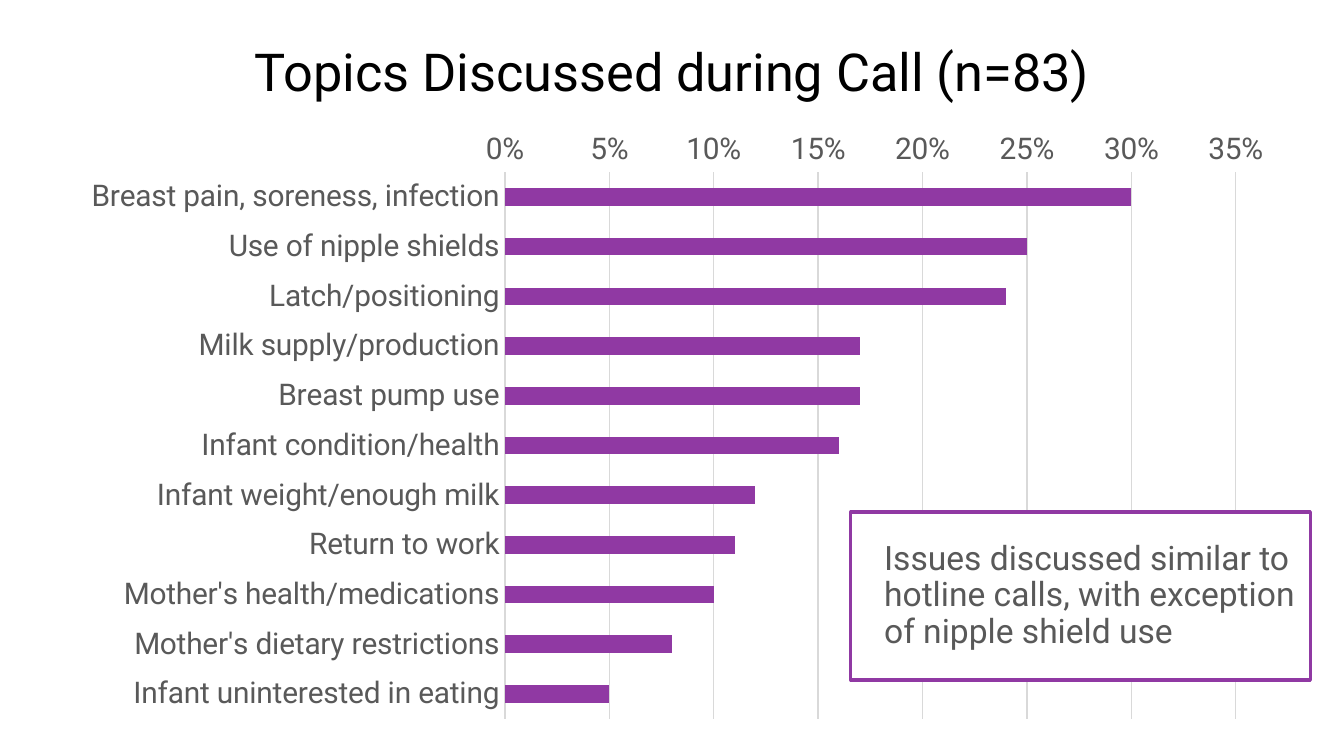
from pptx import Presentation
from pptx.chart.data import CategoryChartData
from pptx.dml.color import RGBColor
from pptx.enum.chart import XL_CHART_TYPE as ChartType, XL_TICK_MARK as TickMark
from pptx.enum.shapes import MSO_SHAPE as Shape
from pptx.enum.text import MSO_ANCHOR as Anchor, PP_ALIGN as Align
from pptx.util import Inches, Pt

COLORS = {
    "title": "000000",
    "text": "595959",
    "accent": "9039A3",
    "grid": "D9D9D9",
    "background": "FFFFFF",
}
FONT = "Roboto"
TOPIC_SHARES = {
    "Breast pain, soreness, infection": 0.30,
    "Use of nipple shields": 0.25,
    "Latch/positioning": 0.24,
    "Milk supply/production": 0.17,
    "Breast pump use": 0.17,
    "Infant condition/health": 0.16,
    "Infant weight/enough milk": 0.12,
    "Return to work": 0.11,
    "Mother's health/medications": 0.10,
    "Mother's dietary restrictions": 0.08,
    "Infant uninterested in eating": 0.05,
}


def rgb(name):
    return RGBColor.from_string(COLORS[name])


def style_font(font, size, color):
    font.name, font.size = FONT, Pt(size)
    font.color.rgb = rgb(color)


def style_line(line, color, width):
    line.color.rgb = rgb(color)
    line.width = Pt(width)


def write_text(frame, text, *, size, color, align=Align.LEFT, indent=0):
    frame.word_wrap = True
    frame.vertical_anchor = Anchor.MIDDLE
    paragraph = frame.paragraphs[0]
    paragraph.alignment = align
    paragraph.line_spacing = 0.9
    properties = paragraph._p.get_or_add_pPr()
    properties.set("marL", str(Inches(indent)))
    properties.set("indent", "0")
    run = paragraph.add_run()
    run.text = text
    style_font(run.font, size, color)


def place_title(slide, left, top, width, height):
    title = slide.shapes.title
    title.left, title.top = Inches(left), Inches(top)
    title.width, title.height = Inches(width), Inches(height)
    write_text(title.text_frame, "Topics Discussed during Call (n=83)",
               size=28, color="title", align=Align.CENTER)


def add_topics_chart(slide, left, top, width, height):
    topics = CategoryChartData(number_format="0%")
    topics.categories = list(TOPIC_SHARES)
    topics.add_series("Series 1", list(TOPIC_SHARES.values()))
    chart = slide.shapes.add_chart(
        ChartType.BAR_CLUSTERED, Inches(left), Inches(top),
        Inches(width), Inches(height), topics).chart
    chart.has_legend = False
    chart.has_title = False
    style_font(chart.font, 10, "title")

    bars = chart.plots[0]
    bars.gap_width = 182
    bars.vary_by_categories = False
    fill = bars.series[0].format.fill
    fill.solid()
    fill.fore_color.rgb = rgb("accent")

    topic_axis, share_axis = chart.category_axis, chart.value_axis
    for axis in (topic_axis, share_axis):
        axis.major_tick_mark = axis.minor_tick_mark = TickMark.NONE
        style_font(axis.tick_labels.font, 16, "text")
    topic_axis.reverse_order = True
    topic_axis.has_major_gridlines = False
    style_line(topic_axis.format.line, "grid", 0.75)

    share_axis.minimum_scale, share_axis.maximum_scale = 0, 0.35
    share_axis.major_unit = 0.05
    share_axis.tick_labels.number_format = "0%"
    share_axis.tick_labels.number_format_is_linked = False
    share_axis.format.line.fill.background()
    share_axis.has_major_gridlines = True
    style_line(share_axis.major_gridlines.format.line, "grid", 0.75)


def add_callout(slide, left, top, width, height):
    callout = slide.shapes.add_shape(
        Shape.RECTANGLE, Inches(left), Inches(top), Inches(width), Inches(height))
    callout.shadow.inherit = False
    callout.fill.solid()
    callout.fill.fore_color.rgb = rgb("background")
    style_line(callout.line, "accent", 1.75)
    write_text(callout.text_frame,
               "Issues discussed similar to hotline calls, "
               "with exception of nipple shield use",
               size=18, color="text", indent=0.15)


def main():
    deck = Presentation()
    deck.slide_width = Inches(10)
    deck.slide_height = deck.slide_width * 9 // 16
    title_only = deck.slide_layouts[5]
    slide = deck.slides.add_slide(title_only)
    place_title(slide, 0, 0.29, 10, 0.53)
    add_topics_chart(slide, 0.5, 0.9, 9.08, 4.54)
    add_callout(slide, 6.33, 3.81, 3.42, 1.25)
    deck.save("out.pptx")


if __name__ == "__main__":
    main()
